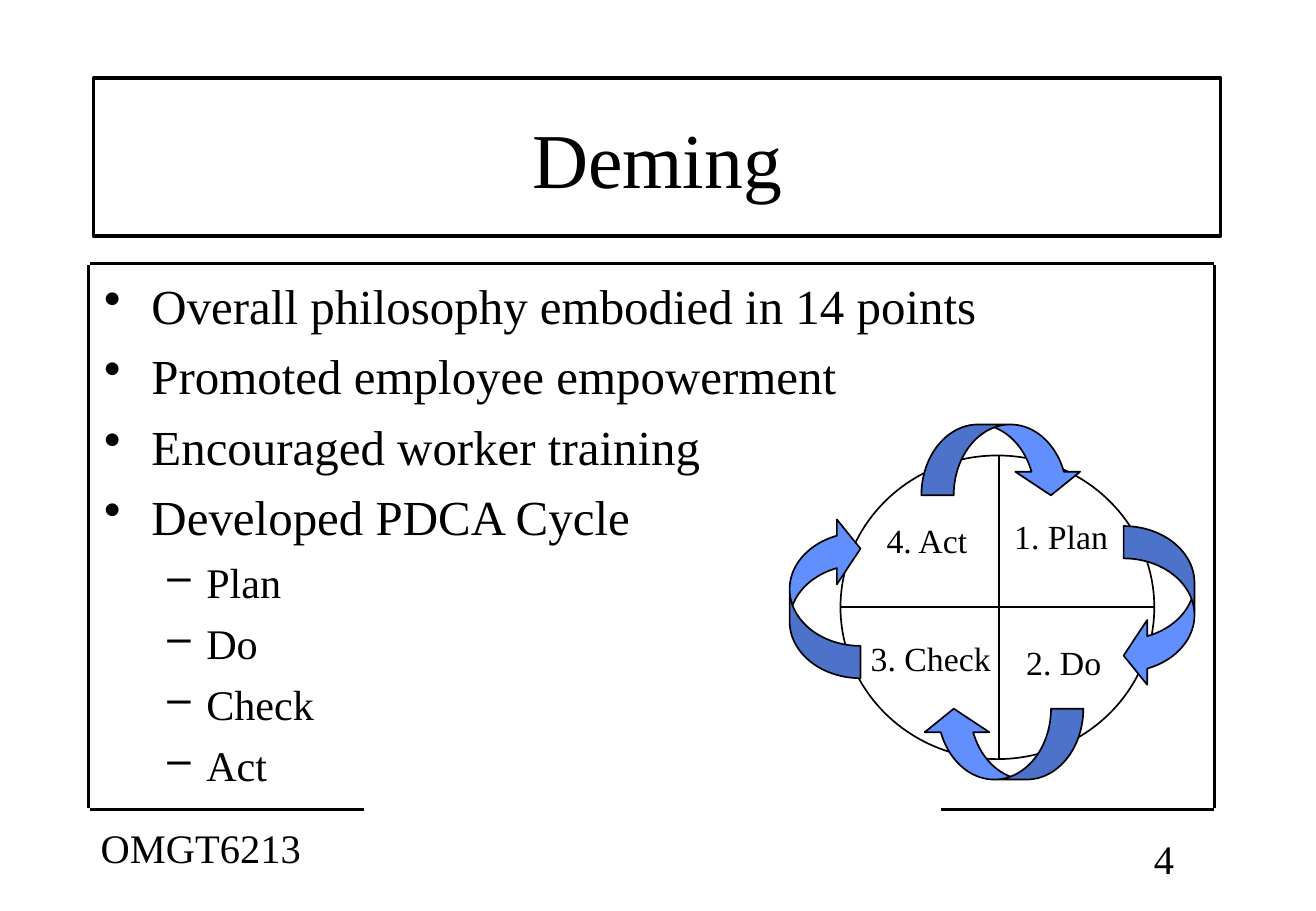
from lxml import etree
from pptx import Presentation
from pptx.dml.color import RGBColor
from pptx.enum.shapes import MSO_CONNECTOR as Conn, MSO_SHAPE as Kind
from pptx.enum.text import MSO_ANCHOR as Anchor, PP_ALIGN as Align
from pptx.oxml.ns import qn
from pptx.util import Pt

BLACK = "000000"
BLUE = "618FFD"
FACE = "Times New Roman"


def paint(part, tint):
    part.solid()
    part.fore_color.rgb = RGBColor.from_string(tint)


def style(par, size):
    par.font.name = FACE
    par.font.size = Pt(size)
    paint(par.font.fill, BLACK)


deck = Presentation()
deck.slide_width = Pt(780)
deck.slide_height = Pt(540)
slide = deck.slides.add_slide(deck.slide_layouts[6])
shapes = slide.shapes

title = shapes.add_shape(Kind.RECTANGLE, Pt(55.5), Pt(46.2), Pt(668), Pt(93.8))
title.shadow.inherit = False
title.fill.background()
paint(title.line.fill, BLACK)
title.line.width = Pt(2)
title.text_frame.vertical_anchor = Anchor.MIDDLE
head = title.text_frame.paragraphs[0]
head.text = "Deming"
head.alignment = Align.CENTER
style(head, 46)

points = [
    (0, "Overall philosophy embodied in 14 points"),
    (0, "Promoted employee empowerment"),
    (0, "Encouraged worker training"),
    (0, "Developed PDCA Cycle"),
    (1, "Plan"),
    (1, "Do"),
    (1, "Check"),
    (1, "Act"),
]
levels = [(29, 28, 28, 7, "•"), (25, 60.5, 23, 6.2, "–")]
body = shapes.add_textbox(Pt(54.7), Pt(155.5), Pt(670), Pt(344))
frame = body.text_frame
frame.word_wrap = True
frame.margin_top = Pt(7.6)
for i, (level, text) in enumerate(points):
    size, left, hang, gap, mark = levels[level]
    par = frame.paragraphs[0] if i == 0 else frame.add_paragraph()
    par.text = text
    par.level = level
    if i:
        par.space_before = Pt(gap)
    props = par._p.get_or_add_pPr()
    props.set("marL", str(Pt(left)))
    props.set("indent", str(-Pt(hang)))
    etree.SubElement(props, qn("a:buChar")).set("char", mark)
    style(par, size)

wheel = shapes.add_shape(Kind.OVAL, Pt(498.2), Pt(270), Pt(186), Pt(180))
wheel.shadow.inherit = False
wheel.fill.background()
paint(wheel.line.fill, BLACK)
wheel.line.width = Pt(1)

lines = [
    (53.5, 156.3, 719.5, 156.3, 2),
    (52.6, 157, 52.6, 479, 2),
    (720, 157, 720, 479, 2),
    (53.5, 480, 215.5, 480, 2),
    (557.5, 480, 719.5, 480, 2),
    (592.3, 270, 592.3, 450, 1),
    (498.2, 360, 684.2, 360, 1),
]
for x1, y1, x2, y2, width in lines:
    line = shapes.add_connector(Conn.STRAIGHT, Pt(x1), Pt(y1), Pt(x2), Pt(y2))
    paint(line.line.fill, BLACK)
    line.line.width = Pt(width)
    etree.SubElement(line._element.spPr, qn("a:effectLst"))

labels = [
    ("1. Plan", 594, 302.4, 74, 20),
    ("2. Do", 601.2, 376.6, 64, 20),
    ("3. Check", 509, 374.4, 90, 20),
    ("4. Act", 518.4, 304.6, 68, 20),
    ("OMGT6213", 52.6, 484.6, 140, 24),
    ("4", 676.8, 491, 42.5, 24),
]
for text, x, y, width, size in labels:
    box = shapes.add_textbox(Pt(x), Pt(y), Pt(width), Pt(size * 1.5))
    box.text_frame.word_wrap = True
    par = box.text_frame.paragraphs[0]
    par.text = text
    style(par, size)

arrows = [(666, 311.8, 0), (573.1, 224.6, 270), (468, 306, 180), (573.1, 393.1, 90)]
for x, y, turn in arrows:
    arrow = shapes.add_shape(Kind.CURVED_LEFT_ARROW, Pt(x), Pt(y), Pt(42), Pt(96))
    arrow.rotation = turn
    arrow.shadow.inherit = False
    for i, value in enumerate([0.457, 0.914, 0.333]):
        arrow.adjustments[i] = value
    paint(arrow.fill, BLUE)
    paint(arrow.line.fill, BLACK)
    arrow.line.width = Pt(1)

deck.save("out.pptx")
